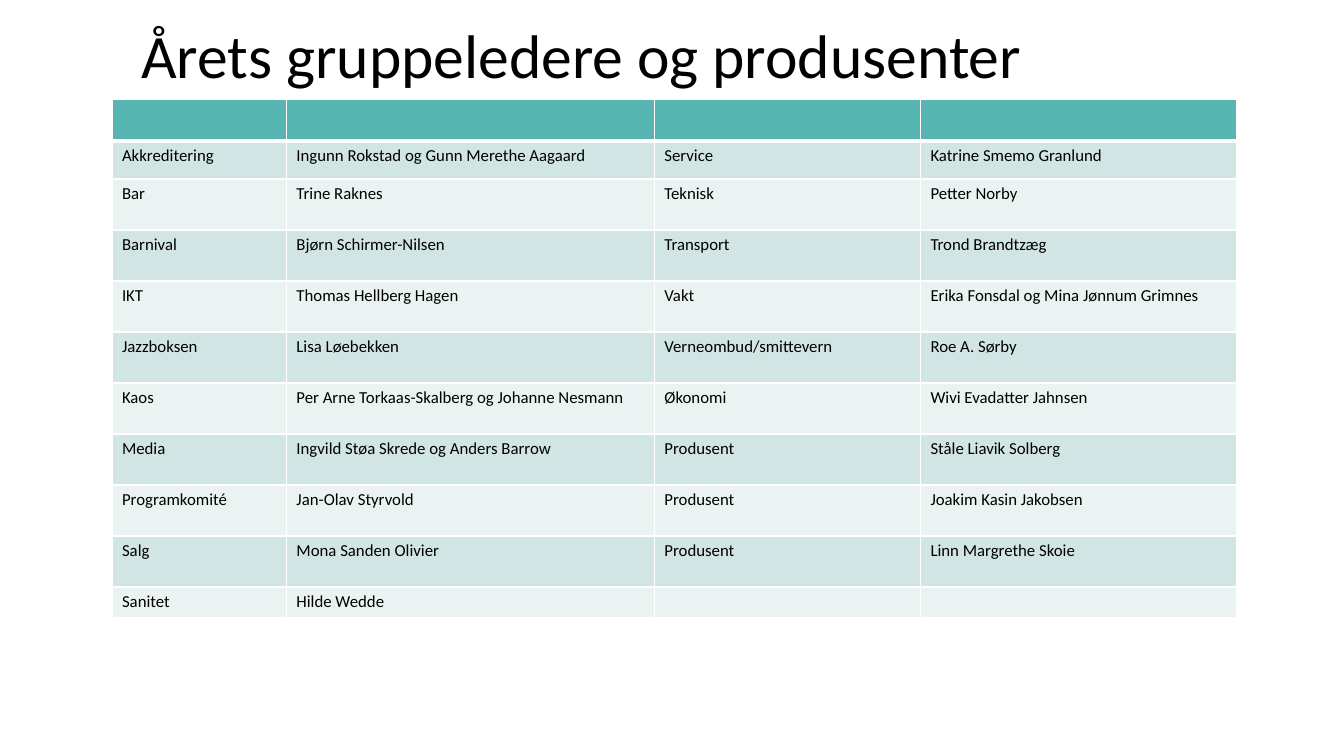
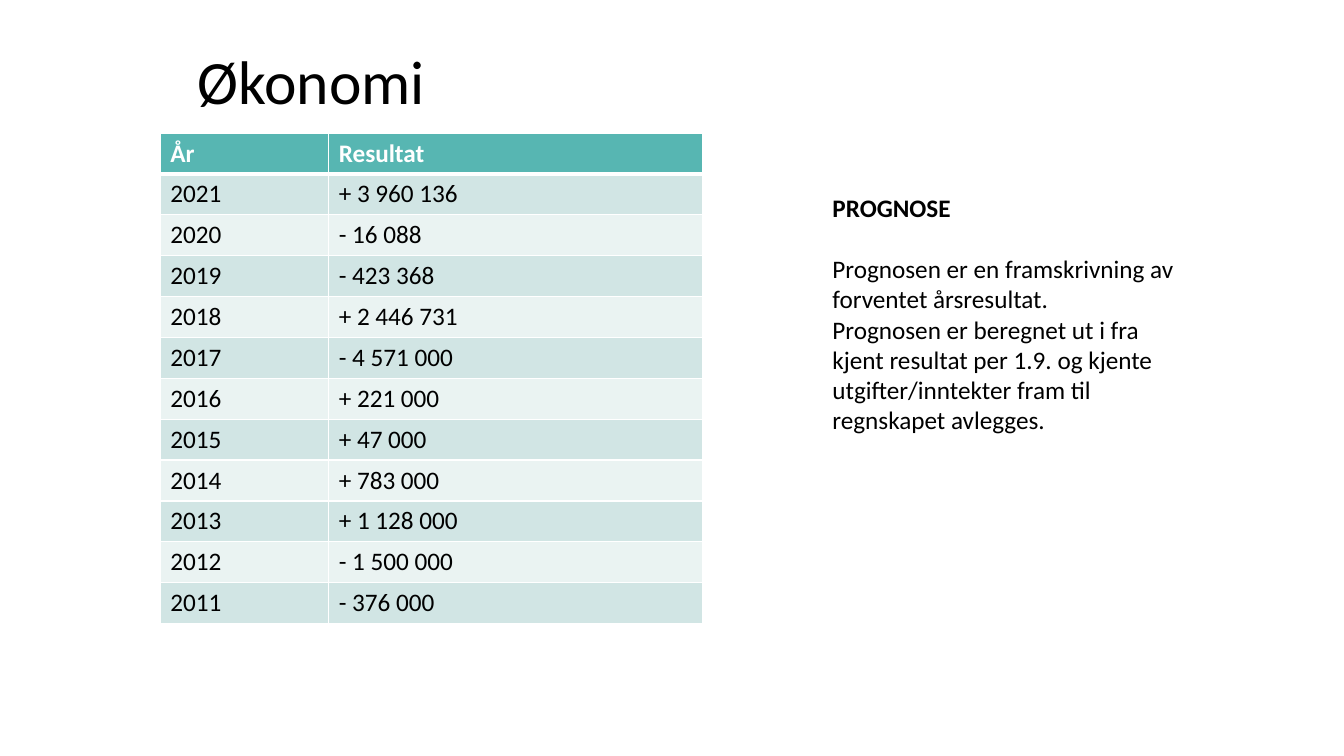
from lxml import etree
from pptx import Presentation
from pptx import util as u
from pptx.dml.color import RGBColor
from pptx.enum import text
from pptx.oxml.ns import qn

WIDTH, HEIGHT = u.Inches(13.333), u.Inches(7.5)
FONT = "Calibri"
BLACK, WHITE = "000000", "FFFFFF"
HEADER_FILL = "57B6B2"
BAND_FILLS = ("D1E5E4", "EAF3F2")

LEADERS = [
    ("", "", "", ""),
    ("Akkreditering", "Ingunn Rokstad og Gunn Merethe Aagaard", "Service", "Katrine Smemo Granlund"),
    ("Bar", "Trine Raknes", "Teknisk", "Petter Norby"),
    ("Barnival", "Bjørn Schirmer-Nilsen", "Transport", "Trond Brandtzæg"),
    ("IKT", "Thomas Hellberg Hagen", "Vakt", "Erika Fonsdal og Mina Jønnum Grimnes"),
    ("Jazzboksen", "Lisa Løebekken", "Verneombud/smittevern", "Roe A. Sørby"),
    ("Kaos", "Per Arne Torkaas-Skalberg og Johanne Nesmann", "Økonomi", "Wivi Evadatter Jahnsen"),
    ("Media", "Ingvild Støa Skrede og Anders Barrow", "Produsent", "Ståle Liavik Solberg"),
    ("Programkomité", "Jan-Olav Styrvold", "Produsent", "Joakim Kasin Jakobsen"),
    ("Salg", "Mona Sanden Olivier", "Produsent", "Linn Margrethe Skoie"),
    ("Sanitet", "Hilde Wedde", "", ""),
]
RESULTS = [
    ("År", "Resultat"),
    ("2021", "+ 3 960 136"),
    ("2020", "- 16 088"),
    ("2019", "- 423 368"),
    ("2018", "+ 2 446 731"),
    ("2017", "- 4 571 000"),
    ("2016", "+ 221 000"),
    ("2015", "+ 47 000"),
    ("2014", "+ 783 000"),
    ("2013", "+ 1 128 000"),
    ("2012", "- 1 500 000"),
    ("2011", "- 376 000"),
]
FORECAST = [
    "PROGNOSE",
    "Prognosen er en framskrivning av forventet årsresultat.",
    "Prognosen er beregnet ut i fra kjent resultat per 1.9. og kjente "
    "utgifter/inntekter fram til regnskapet avlegges.",
]


def across(percent):
    return round(WIDTH * percent / 100)


def down(percent):
    return round(HEIGHT * percent / 100)


def color(hex_value):
    return RGBColor.from_string(hex_value)


def style_runs(paragraph, size, hex_value=BLACK, bold=False):
    for run in paragraph.runs:
        run.font.name = FONT
        run.font.size = u.Pt(size)
        run.font.bold = bold
        run.font.color.rgb = color(hex_value)


def add_titled_slide(deck, title_text, left, top, width):
    """Title-only slide; lengths are percent of the slide."""
    slide = deck.slides.add_slide(deck.slide_layouts[5])
    title = slide.shapes.title
    title.left, title.top = across(left), down(top)
    title.width, title.height = across(width), down(19.33)
    frame = title.text_frame
    frame.text = title_text
    frame.word_wrap = True
    frame.auto_size = text.MSO_AUTO_SIZE.NONE
    frame.vertical_anchor = text.MSO_ANCHOR.MIDDLE
    heading = frame.paragraphs[0]
    heading.alignment = text.PP_ALIGN.LEFT
    heading.line_spacing = 0.9
    style_runs(heading, 44)
    return slide


def set_borders(cell, bottom):
    """White cell edges; they must come before the cell's fill."""
    properties = cell._tc.get_or_add_tcPr()
    for side, points in (("L", 1), ("R", 1), ("T", 1), ("B", bottom)):
        edge = etree.SubElement(properties, qn(f"a:ln{side}"), w=str(u.Pt(points)))
        fill = etree.SubElement(edge, qn("a:solidFill"))
        etree.SubElement(fill, qn("a:srgbClr"), val=WHITE)


def add_banded_table(slide, rows, left, top, column_widths, row_heights, size):
    """Table with a header row; lengths are percent of the slide."""
    table = slide.shapes.add_table(
        len(rows), len(column_widths), across(left), down(top),
        across(sum(column_widths)), down(sum(row_heights))).table
    for column, width in zip(table.columns, column_widths):
        column.width = across(width)
    for index, (values, height) in enumerate(zip(rows, row_heights)):
        is_header = index == 0
        table.rows[index].height = down(height)
        for cell, value in zip(table.rows[index].cells, values):
            set_borders(cell, bottom=3 if is_header else 1)
            cell.fill.solid()
            cell.fill.fore_color.rgb = color(
                HEADER_FILL if is_header else BAND_FILLS[(index - 1) % 2])
            cell.text_frame.text = value
            line = cell.text_frame.paragraphs[0]
            style_runs(line, size, WHITE if is_header else BLACK, is_header)
            if not value:  # keeps empty cells from stretching their row
                etree.SubElement(line._p, qn("a:endParaRPr"), sz=str(size * 100))


def add_note(slide, lines, left, top, width, height):
    """Text with a bold heading; lengths are percent of the slide."""
    frame = slide.shapes.add_textbox(
        across(left), down(top), across(width), down(height)).text_frame
    frame.word_wrap = True
    frame.text = "\n".join(lines)
    for index, paragraph in enumerate(frame.paragraphs):
        style_runs(paragraph, 18, bold=index == 0)
    frame.paragraphs[0].space_after = u.Pt(22)


def main():
    deck = Presentation()
    deck.slide_width, deck.slide_height = WIDTH, HEIGHT

    # Group leaders and producers
    leaders = add_titled_slide(deck, "Årets gruppeledere og produsenter", 9.75, -1.87, 86.25)
    add_banded_table(leaders, LEADERS, 8.33, 13.2, (12.98, 27.38, 19.8, 23.55),
                     [5.41, 5.07] + [6.75] * 8 + [4.07], 12)

    # Yearly results and forecast
    economy = add_titled_slide(deck, "Økonomi", 13.95, 1.47, 89.4)
    add_banded_table(economy, RESULTS, 11.93, 17.6, (12.53, 27.83),
                     [5.41] * len(RESULTS), 18)
    add_note(economy, FORECAST, 61.2, 24.8, 26.93, 41.73)

    deck.save("out.pptx")


if __name__ == "__main__":
    main()
